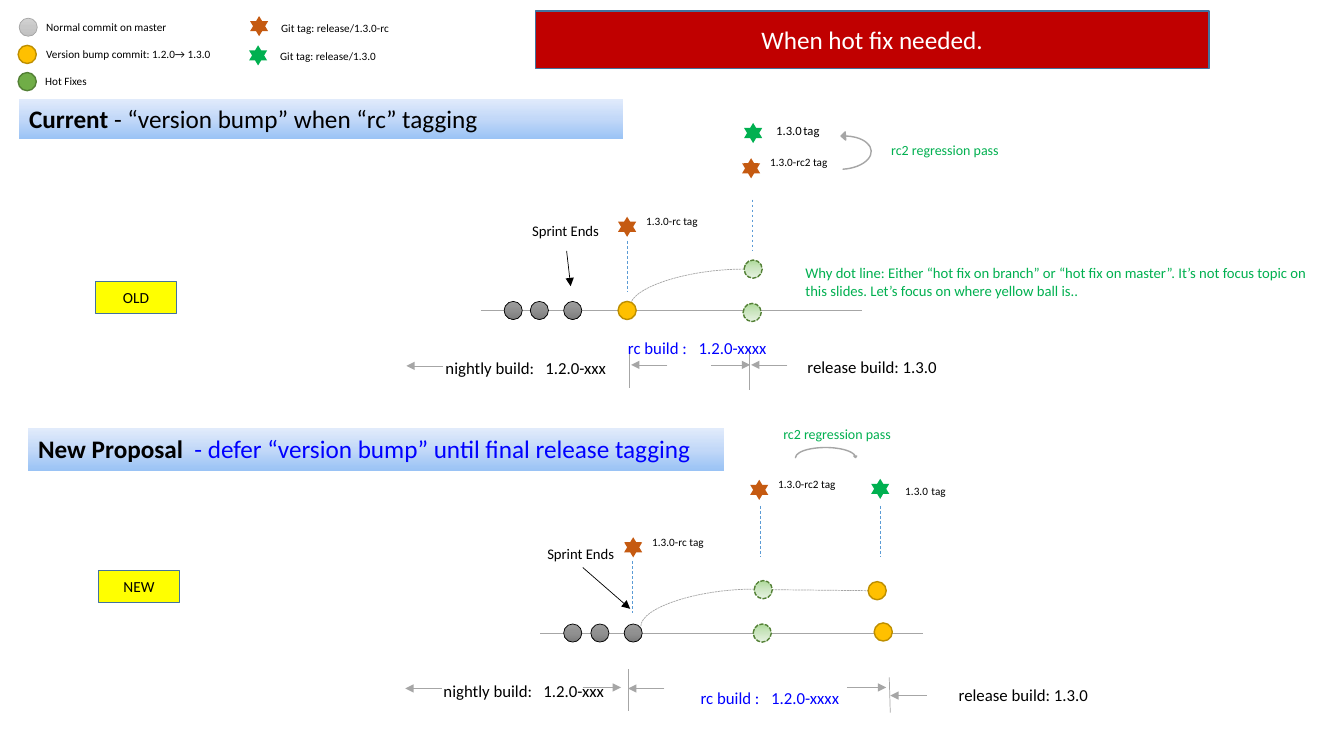
"""Build the slide comparing the current and proposed version bump timelines."""
from dataclasses import dataclass
from typing import Optional

from lxml.etree import SubElement
from pptx import Presentation
from pptx.dml.color import RGBColor
from pptx.enum.dml import MSO_LINE
from pptx.enum.shapes import MSO_CONNECTOR as Link, MSO_SHAPE as Preset
from pptx.enum.text import MSO_ANCHOR as Anchor, MSO_AUTO_SIZE as AutoSize, PP_ALIGN as Align
from pptx.oxml.ns import qn
from pptx.util import Pt

PX = 9144
FONT = "Calibri"
BLACK = RGBColor(0x00, 0x00, 0x00)
WHITE = RGBColor(0xFF, 0xFF, 0xFF)
RED = RGBColor(0xC0, 0x00, 0x00)
YELLOW = RGBColor(0xFF, 0xFF, 0x00)
BLUE = RGBColor(0x00, 0x00, 0xFF)
FRAME = RGBColor(0x43, 0x73, 0x9E)
ORANGE = RGBColor(0xC5, 0x5A, 0x11)
GREEN = RGBColor(0x00, 0xB0, 0x50)
GREY = RGBColor(0xA6, 0xA6, 0xA6)
SKY = RGBColor(0x5B, 0x9B, 0xD5)
LIGHT_GREY = RGBColor(0xA5, 0xA5, 0xA5)
GOLD = RGBColor(0xFF, 0xC0, 0x00)
DARK_GOLD = RGBColor(0xBD, 0x8E, 0x00)
LEAF = RGBColor(0x70, 0xAD, 0x47)
DARK_LEAF = RGBColor(0x53, 0x80, 0x35)
HEADER_SHADES = (RGBColor(0x9A, 0xC3, 0xF5), RGBColor(0xC2, 0xD8, 0xF8), RGBColor(0xE1, 0xEB, 0xFB))
LEGEND_SHADES = (RGBColor(0xD2, 0xD2, 0xD2), RGBColor(0xC8, 0xC8, 0xC8), RGBColor(0xC0, 0xC0, 0xC0))
COMMIT_SHADES = (RGBColor(0x9D, 0x9D, 0x9D), RGBColor(0x90, 0x90, 0x90), RGBColor(0x7C, 0x7C, 0x7C))
FIX_SHADES = (RGBColor(0xAE, 0xDA, 0x9B), RGBColor(0xCD, 0xE6, 0xC2), RGBColor(0xE6, 0xF2, 0xE1))


@dataclass(frozen=True)
class Look:
    """Fill shades and outline of a shape."""
    shades: tuple
    outline: Optional[RGBColor] = None
    weight: float = 1
    dash: Optional[MSO_LINE] = None
    angle: int = 270


@dataclass(frozen=True)
class Span:
    """Run of text with one style."""
    text: str
    size: float
    color: RGBColor = BLACK
    bold: bool = False


@dataclass(frozen=True)
class Label:
    """Text box holding one span, with an optional tab stop."""
    left: int
    top: int
    width: int
    height: int
    span: Span
    tab: int = 0


@dataclass(frozen=True)
class Stroke:
    """Straight line between two points."""
    start: tuple
    end: tuple
    color: RGBColor = GREY
    dash: Optional[MSO_LINE] = None
    arrow: bool = False


LEGEND_COMMIT = Look(LEGEND_SHADES, LIGHT_GREY, 0.5)
COMMIT = Look(COMMIT_SHADES, BLACK, 0.5)
BUMP = Look((GOLD,), DARK_GOLD)
LEGEND_FIX = Look((LEAF,), DARK_LEAF)
FIX = Look(FIX_SHADES, DARK_LEAF, dash=MSO_LINE.SQUARE_DOT)
HEADER = Look(HEADER_SHADES, angle=90)
RC, FINAL = Look((ORANGE,)), Look((GREEN,))

BALLS = {
    LEGEND_COMMIT: [(19, 18)],
    LEGEND_FIX: [(18, 72)],
    COMMIT: [(500, 299), (526, 299), (559, 299), (559, 619), (586, 619), (619, 619)],
    BUMP: [(18, 45), (613, 299), (861, 577), (867, 618)],
    FIX: [(738, 258), (737, 301), (748, 576), (747, 619)],
}
STARS = {
    RC: [(248, 16), (613, 215), (736, 157), (619, 533), (744, 476)],
    FINAL: [(247, 45), (738, 122), (864, 475)],
}
HEADERS = [
    ((19, 98, 599, 40), (Span("Current ", 18, bold=True),
                         Span("- “version bump” when “rc” tagging", 18)), 0),
    ((28, 425, 690, 42), (Span("New Proposal\t", 18, bold=True),
                          Span("- defer “version bump” until final release tagging", 18, BLUE)), 155),
]
BOXES = [
    ((531, 11, 668, 57), Look((RED,), FRAME), Span("When hot fix needed.", 18, WHITE)),
    ((95, 279, 80, 32), Look((YELLOW,), FRAME), Span("OLD", 11)),
    ((98, 566, 80, 32), Look((YELLOW,), FRAME), Span("NEW", 11)),
]
NIGHTLY = Span("nightly build:\t1.2.0-xxx", 12)
RC_BUILD = Span("rc build :\t1.2.0-xxxx", 12, BLUE)
RELEASE = Span("release build: 1.3.0", 12)
SPRINT = Span("Sprint Ends", 10.5)
PASS = Span("rc2 regression pass", 10, GREEN)
WHY = ("Why dot line: Either “hot fix on branch” or “hot fix on master”. It’s not focus topic on "
       "this slides. Let’s focus on where yellow ball is..")
SMALL_LABELS = [
    (36, 15, "Normal commit on master"), (36, 42, "Version bump commit: 1.2.0→ 1.3.0"),
    (35, 69, "Hot Fixes"), (269, 16, "Git tag: release/1.3.0-rc"), (268, 44, "Git tag: release/1.3.0"),
    (631, 208, "1.3.0-rc tag"), (754, 149, "1.3.0-rc2 tag"),
    (637, 526, "1.3.0-rc tag"), (762, 469, "1.3.0-rc2 tag"),
]
LABELS = [Label(left, top, 202, 24, Span(text, 8)) for left, top, text in SMALL_LABELS] + [
    Label(760, 117, 202, 25, Span("1.3.0\ttag", 9), 27), Label(888, 476, 202, 24, Span("1.3.0\ttag", 8), 26),
    Label(432, 350, 181, 30, NIGHTLY, 99), Label(430, 670, 181, 30, NIGHTLY, 99),
    Label(613, 330, 269, 30, RC_BUILD, 70), Label(685, 677, 269, 30, RC_BUILD, 70),
    Label(791, 349, 269, 30, RELEASE), Label(941, 674, 269, 30, RELEASE),
    Label(518, 215, 126, 29, SPRINT), Label(533, 536, 126, 29, SPRINT),
    Label(874, 135, 141, 27, PASS), Label(767, 417, 141, 27, PASS),
    Label(789, 257, 525, 45, Span(WHY, 10.5, GREEN)),
]
TAG_DROPS = [(622, 239), (746, 198), (627, 557), (754, 502), (873, 502)]
BUILD_ARROWS = [
    (439, 403, 363), (662, 626, 362), (705, 744, 362), (781, 745, 362),
    (578, 616, 682), (438, 402, 683), (659, 623, 683), (919, 883, 690), (840, 879, 682),
]
STROKES = [
    Stroke((477, 308), (855, 308)), Stroke((536, 628), (915, 628)),
    Stroke((624, 344), (624, 385)), Stroke((743, 345), (743, 387)),
    Stroke((623, 664), (623, 705)), Stroke((882, 672), (883, 707)),
    Stroke((766, 585), (861, 586), dash=MSO_LINE.SQUARE_DOT),
    Stroke((562, 249), (566, 284), BLACK, arrow=True), Stroke((578, 563), (625, 604), BLACK, arrow=True),
    *(Stroke((x, y), (x, y + 51), SKY, MSO_LINE.DASH) for x, y in TAG_DROPS),
    *(Stroke((tail, y), (head, y), arrow=True) for tail, head, y in BUILD_ARROWS),
]
BRANCHES = [((625, 304), (738, 267)), ((636, 622), (748, 585))]


def style_line(line, color: RGBColor, weight: float, dash: Optional[MSO_LINE]) -> None:
    """Set colour, weight and dash of a line."""
    line.color.rgb = color
    line.width = Pt(weight)
    if dash is not None:
        line.dash_style = dash


def draw_shape(slide, preset: Preset, frame: tuple, look: Look):
    """Add a preset shape with its look."""
    shape = slide.shapes.add_shape(preset, *(length * PX for length in frame))
    shape.shadow.inherit = False
    if len(look.shades) == 1:
        shape.fill.solid()
        shape.fill.fore_color.rgb = look.shades[0]
    else:
        shape.fill.gradient()
        shape.fill.gradient_angle = look.angle
        stops = shape._element.spPr.find(".//" + qn("a:gsLst"))
        stops.clear()
        for place, shade in zip((0, 50000, 100000), look.shades):
            stop = SubElement(stops, qn("a:gs"), pos=str(place))
            SubElement(stop, qn("a:srgbClr"), val=str(shade))
    if look.outline is None:
        shape.line.fill.background()
    else:
        style_line(shape.line, look.outline, look.weight, look.dash)
    return shape


def write(shape, spans: tuple, align: Align, anchor: Anchor, tab: int = 0) -> None:
    """Write spans into one paragraph of a shape."""
    frame = shape.text_frame
    frame.word_wrap = True
    frame.vertical_anchor = anchor
    if anchor == Anchor.TOP:
        frame.auto_size = AutoSize.SHAPE_TO_FIT_TEXT
    paragraph = frame.paragraphs[0]
    paragraph.alignment = align
    if tab:
        tabs = SubElement(paragraph._p.get_or_add_pPr(), qn("a:tabLst"))
        SubElement(tabs, qn("a:tab"), pos=str(tab * PX), algn="l")
    for span in spans:
        run = paragraph.add_run()
        run.text = span.text
        run.font.name, run.font.size, run.font.bold = FONT, Pt(span.size), span.bold
        run.font.color.rgb = span.color


def draw_stroke(slide, stroke: Stroke, kind: Link = Link.STRAIGHT):
    """Add a connector without shadow."""
    connector = slide.shapes.add_connector(kind, *(length * PX for length in stroke.start + stroke.end))
    style_line(connector.line, stroke.color, 0.5, stroke.dash)
    properties = connector._element.spPr
    if stroke.arrow:
        SubElement(properties.find(qn("a:ln")), qn("a:tailEnd"), type="triangle")
    SubElement(properties, qn("a:effectLst"))
    return connector


def draw_branch(slide, start: tuple, end: tuple) -> None:
    """Add a dotted quarter curve rising from start to end."""
    run, rise = end[0] - start[0], start[1] - end[1]
    left, top = (start[0] + end[0] - rise) // 2, (start[1] + end[1] - run) // 2
    turned = Stroke((left + rise, top + run), (left, top), dash=MSO_LINE.SQUARE_DOT)
    branch = draw_stroke(slide, turned, Link.CURVE)
    branch._element.spPr.find(qn("a:prstGeom")).set("prst", "curvedConnector2")
    branch._element.spPr.find(qn("a:xfrm")).set("rot", "5400000")


def draw_pass_arrow(slide, frame: tuple, turn: float, flipped: bool) -> None:
    """Add the curved arrow from the rc2 tag to the final tag."""
    arrow = draw_shape(slide, Preset.CURVED_UP_ARROW, frame, Look((GREY,), GREY))
    for index, value in enumerate((0, 0.28, 0.15)):
        arrow.adjustments[index] = value
    arrow.rotation = turn
    if flipped:
        arrow._element.spPr.find(qn("a:xfrm")).set("flipV", "1")


def main() -> None:
    """Build and save the slide."""
    deck = Presentation()
    deck.slide_width, deck.slide_height = 1333 * PX, 750 * PX
    slide = deck.slides.add_slide(deck.slide_layouts[6])
    for frame, spans, tab in HEADERS:
        write(draw_shape(slide, Preset.RECTANGLE, frame, HEADER), spans, Align.LEFT, Anchor.TOP, tab)
    for stroke in STROKES:
        draw_stroke(slide, stroke)
    for start, end in BRANCHES:
        draw_branch(slide, start, end)
    for preset, height, groups in ((Preset.OVAL, 18, BALLS), (Preset.STAR_6_POINT, 20, STARS)):
        for look, corners in groups.items():
            for left, top in corners:
                draw_shape(slide, preset, (left, top, 18, height), look)
    draw_pass_arrow(slide, (831, 134, 37, 29), 266.6, False)
    draw_pass_arrow(slide, (789, 444, 61, 10), 0, True)
    for frame, look, span in BOXES:
        write(draw_shape(slide, Preset.RECTANGLE, frame, look), (span,), Align.CENTER, Anchor.MIDDLE)
    for label in LABELS:
        frame = (label.left, label.top, label.width, label.height)
        box = slide.shapes.add_textbox(*(length * PX for length in frame))
        write(box, (label.span,), Align.LEFT, Anchor.TOP, label.tab)
    deck.save("out.pptx")


if __name__ == "__main__":
    main()
